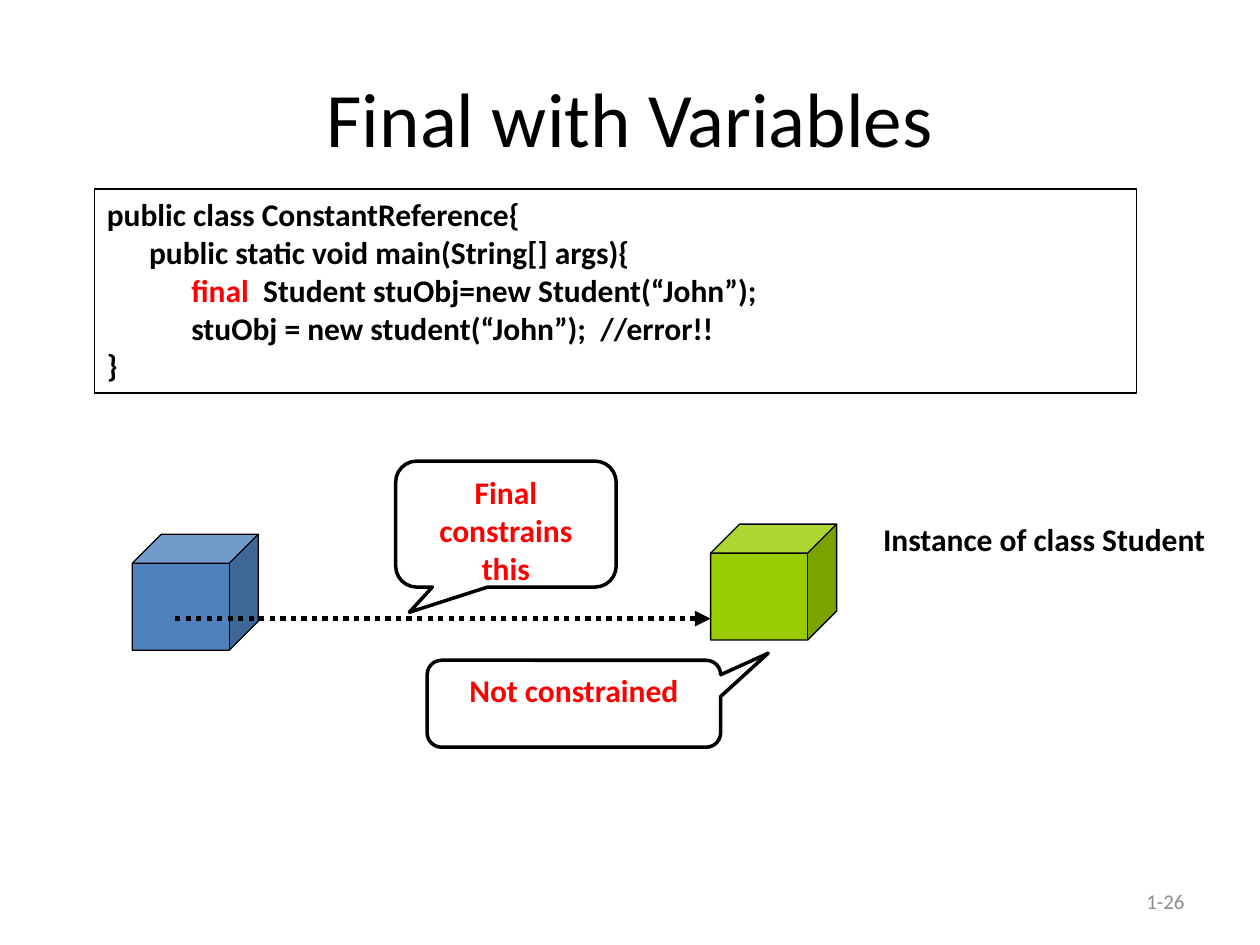
from lxml import etree
from pptx import Presentation
from pptx.dml.color import RGBColor
from pptx.enum import dml, shapes, text
from pptx.oxml.ns import qn
from pptx.util import Inches, Pt

BLACK, RED, WHITE, GREY = "000000", "FF0000", "FFFFFF", "8C8C8C"
BLUE, GREEN = "4F81BD", "99CC00"
BOLD = dict(size=Pt(18), bold=True)
INDENT = 0.335  # one level of code, in inches


def rgb(value):
    return RGBColor.from_string(value)


def set_attrs(obj, **values):
    for name, value in values.items():
        setattr(obj, name, value)


def add_run(p, words, color=BLACK, **font):
    r = p.add_run()
    r.text = words
    set_attrs(r.font, name="Calibri", **font)
    r.font.color.rgb = rgb(color)


def add_shape(slide, kind, box, fill=None, line_width=0.75, adjustments=()):
    sp = slide.shapes.add_shape(kind, *map(Inches, box))
    sp.shadow.inherit = False
    if fill:
        sp.fill.solid()
        sp.fill.fore_color.rgb = rgb(fill)
    else:
        sp.fill.background()
    sp.line.color.rgb = rgb(BLACK)
    sp.line.width = Pt(line_width)
    for i, value in enumerate(adjustments):
        sp.adjustments[i] = value
    return sp


def add_title(slide, box, words):
    sp = slide.shapes.title
    set_attrs(sp, **dict(zip(("left", "top", "width", "height"), map(Inches, box))))
    tf = sp.text_frame
    tf.vertical_anchor = text.MSO_ANCHOR.MIDDLE
    p = tf.paragraphs[0]
    p.alignment = text.PP_ALIGN.CENTER
    add_run(p, words, size=Pt(44))


def add_label(slide, box, words, align, anchor, wrap, color=BLACK, **font):
    tf = slide.shapes.add_textbox(*map(Inches, box)).text_frame
    set_attrs(tf, word_wrap=wrap, vertical_anchor=anchor)
    p = tf.paragraphs[0]
    p.alignment = align
    add_run(p, words, color, **font)


def add_code(slide, box, lines):
    tf = add_shape(slide, shapes.MSO_SHAPE.RECTANGLE, box).text_frame
    set_attrs(tf, word_wrap=True, vertical_anchor=text.MSO_ANCHOR.TOP)
    for i, (level, runs) in enumerate(lines):
        p = tf.add_paragraph() if i else tf.paragraphs[0]
        p.alignment = text.PP_ALIGN.LEFT
        p._p.get_or_add_pPr().set("marL", str(Inches(level * INDENT)))
        for words, color in runs:
            add_run(p, words, color, **BOLD)


def add_callout(slide, box, words, tip):
    sp = add_shape(slide, shapes.MSO_SHAPE.ROUNDED_RECTANGULAR_CALLOUT, box,
                   WHITE, 2, (*tip, 0.167))
    tf = sp.text_frame
    set_attrs(tf, word_wrap=True, vertical_anchor=text.MSO_ANCHOR.TOP)
    p = tf.paragraphs[0]
    p.alignment = text.PP_ALIGN.CENTER
    add_run(p, words, RED, **BOLD)


def add_arrow(slide, start, end):
    line = slide.shapes.add_connector(
        shapes.MSO_CONNECTOR.STRAIGHT, *map(Inches, (*start, *end)))
    line.line.color.rgb = rgb(BLACK)
    set_attrs(line.line, width=Pt(3), dash_style=dml.MSO_LINE.ROUND_DOT)
    sp_pr = line._element.spPr
    etree.SubElement(sp_pr.find(qn("a:ln")), qn("a:tailEnd"), type="triangle")
    etree.SubElement(sp_pr, qn("a:effectLst"))


def add_diagram(slide, box):
    x, y, width, _ = box
    # Reference and the object it points to
    for left, top, color in ((x, y + 0.58, BLUE), (x + 4.59, y + 0.5, GREEN)):
        add_shape(slide, shapes.MSO_SHAPE.CUBE, (left, top, 1, 0.92), color,
                  adjustments=(0.25,))
    add_arrow(slide, (x + 0.34, y + 1.25), (x + 4.59, y + 1.25))
    add_label(slide, (x + width - 2.78, y + 0.42, 2.78, 0.4),
              "Instance of class Student", text.PP_ALIGN.LEFT,
              text.MSO_ANCHOR.TOP, False, **BOLD)
    # Callouts
    add_callout(slide, (x + 2.09, y, 1.75, 1), "Final constrains this", (-0.438, 0.7))
    add_callout(slide, (x + 2.34, y + 1.58, 2.33, 0.69), "Not constrained",
                (0.662, -0.582))


def main():
    prs = Presentation()
    set_attrs(prs, slide_width=Inches(10), slide_height=Inches(7.5))
    slide = prs.slides.add_slide(prs.slide_layouts[5])

    add_title(slide, (0.5, 0.3, 9, 1.25), "Final with Variables")
    # Slide number
    add_label(slide, (7.17, 6.95, 2.33, 0.4), "1-26", text.PP_ALIGN.RIGHT,
              text.MSO_ANCHOR.MIDDLE, True, GREY, size=Pt(12))
    add_code(slide, (0.75, 1.5, 8.27, 1.62), [
        (0, [("public class ConstantReference{", BLACK)]),
        (1, [("public static void main(String[] args){", BLACK)]),
        (2, [("final  ", RED), ("Student stuObj=new Student(“John”);", BLACK)]),
        (2, [("stuObj = new student(“John”);  //error!!", BLACK)]),
        (0, [("}", BLACK)]),
    ])
    add_diagram(slide, (1.05, 3.66, 8.64, 2.27))
    prs.save("out.pptx")


if __name__ == "__main__":
    main()
